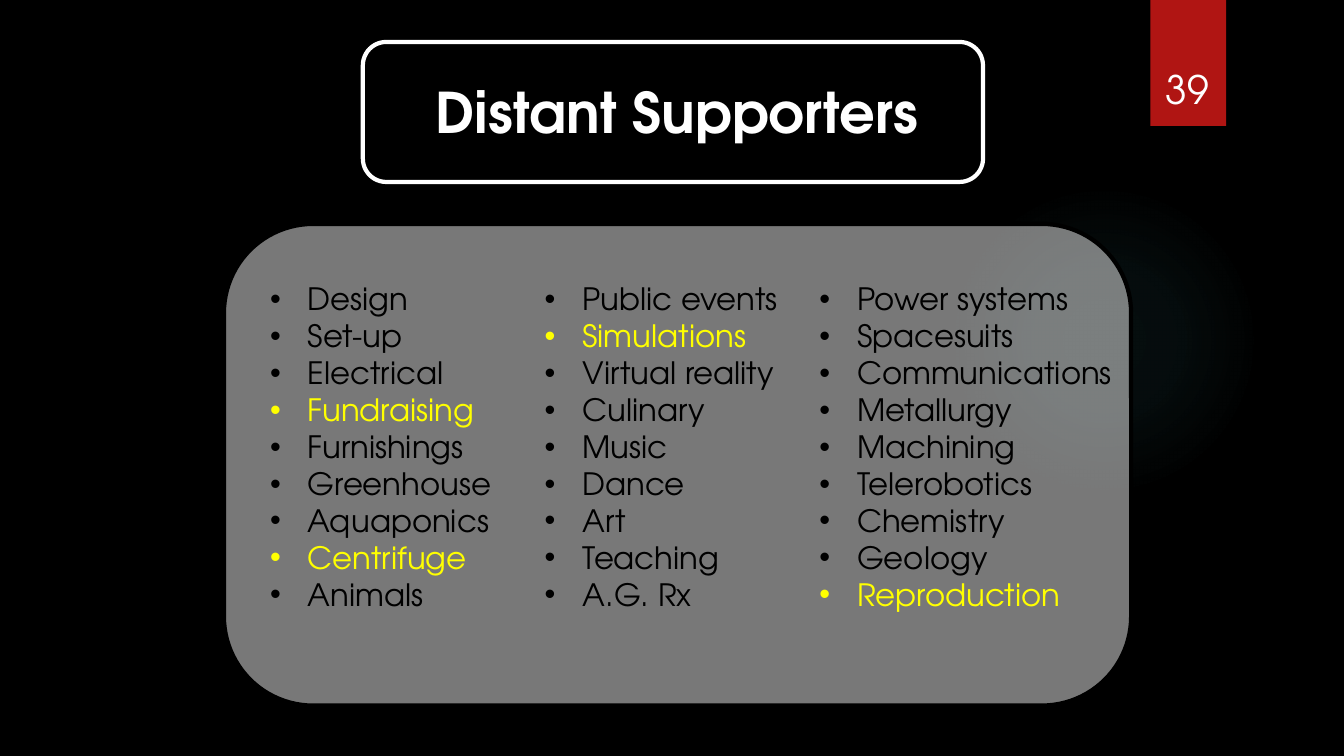
from dataclasses import dataclass

from lxml import etree
from pptx import Presentation
from pptx.dml.color import RGBColor
from pptx.enum import shapes, text
from pptx.oxml import ns
from pptx.util import Pt

# Content
TITLE = "Distant Supporters"
PAGE_NUMBER = "39"
COLUMNS = [
    ["Design", "Set-up", "Electrical", "Fundraising", "Furnishings",
     "Greenhouse", "Aquaponics", "Centrifuge", "Animals"],
    ["Public events", "Simulations", "Virtual reality", "Culinary", "Music",
     "Dance", "Art", "Teaching", "A.G. Rx"],
    ["Power systems", "Spacesuits", "Communications", "Metallurgy", "Machining",
     "Telerobotics", "Chemistry", "Geology", "Reproduction"],
]
HIGHLIGHTED = {"Fundraising", "Centrifuge", "Simulations", "Reproduction"}


@dataclass(frozen=True)
class Theme:
    font: str = "TeX Gyre Adventor"
    black: str = "000000"
    white: str = "FFFFFF"
    yellow: str = "FFFF00"
    red: str = "B01513"
    glow: str = "50B9C1"
    title_size: int = 40
    number_size: int = 28
    list_size: int = 22


THEME = Theme()

# Layout in points
COLUMN_LEFT, COLUMN_TOP, COLUMN_PITCH = 185.8, 196.6, 196.2
COLUMN_WIDTHS = [178, 230, 230]
COLUMN_HEIGHT = 247
BULLET_INDENT = 27
GLOW_STOPS = [(0, 7), (36, 6), (69, 0)]  # position and opacity, percent


def add_child(parent, tag, **attributes):
    child = etree.SubElement(parent, ns.qn(tag))
    for name, value in attributes.items():
        child.set(name, str(value))
    return child


def add_panel(page, kind, frame, fill, opacity=100, line=None):
    panel = page.shapes.add_shape(kind, *map(Pt, frame))
    panel.shadow.inherit = False
    panel.fill.solid()
    panel.fill.fore_color.rgb = RGBColor.from_string(fill)
    if opacity < 100:
        color = panel.fill._xPr.find(".//" + ns.qn("a:srgbClr"))
        add_child(color, "a:alpha", val=opacity * 1000)
    if line:
        panel.line.color.rgb = RGBColor.from_string(line)
        panel.line.width = Pt(3)
    else:
        panel.line.fill.background()
    return panel


def add_glow(page, frame):
    glow = add_panel(page, shapes.MSO_SHAPE.OVAL, frame, THEME.glow)
    glow.fill.gradient()
    gradient = glow._element.spPr.find(ns.qn("a:gradFill"))
    for child in list(gradient):
        gradient.remove(child)
    stops = add_child(gradient, "a:gsLst")
    for position, opacity in GLOW_STOPS:
        stop = add_child(stops, "a:gs", pos=position * 1000)
        color = add_child(stop, "a:srgbClr", val=THEME.glow)
        add_child(color, "a:alpha", val=opacity * 1000)
    center = add_child(gradient, "a:path", path="circle")
    add_child(center, "a:fillToRect", l=50000, t=50000, r=50000, b=50000)


def add_text(page, frame, lines, size, color, bold=False, bullets=False,
             anchor=text.MSO_ANCHOR.TOP, grow=True):
    box = page.shapes.add_textbox(*map(Pt, frame))
    body = box.text_frame
    body.word_wrap = True
    body.vertical_anchor = anchor
    if grow:
        body.auto_size = text.MSO_AUTO_SIZE.SHAPE_TO_FIT_TEXT
    for index, line in enumerate(lines):
        para = body.paragraphs[0] if index == 0 else body.add_paragraph()
        if bullets:
            properties = para._p.get_or_add_pPr()
            properties.set("marL", str(Pt(BULLET_INDENT)))
            properties.set("indent", str(-Pt(BULLET_INDENT)))
            add_child(properties, "a:buFont", typeface="Arial")
            add_child(properties, "a:buChar", char="•")
        else:
            para.alignment = text.PP_ALIGN.CENTER
        span = para.add_run()
        span.text = line
        span.font.name = THEME.font
        span.font.size = Pt(size)
        span.font.bold = bold
        shade = THEME.yellow if line in HIGHLIGHTED else color
        span.font.color.rgb = RGBColor.from_string(shade)


def main():
    deck = Presentation()
    deck.slide_width, deck.slide_height = Pt(960), Pt(540)
    page = deck.slides.add_slide(deck.slide_layouts[6])
    page.background.fill.solid()
    page.background.fill.fore_color.rgb = RGBColor.from_string(THEME.black)

    # Backdrop glow and page number ribbon
    add_glow(page, (677.5, 131.8, 221.8, 221.8))
    add_panel(page, shapes.MSO_SHAPE.RECTANGLE, (821.8, 0, 54, 90), THEME.red)

    # Title
    rounded = shapes.MSO_SHAPE.ROUNDED_RECTANGLE
    add_panel(page, rounded, (259.2, 30, 443, 100), THEME.black, 71, THEME.white)
    add_text(page, (262, 51.8, 443, 55.4), [TITLE], THEME.title_size,
             THEME.white, bold=True)

    # Supporter lists
    panel = add_panel(page, rounded, (160, 160, 648, 344), THEME.white, 47,
                      THEME.black)
    panel.adjustments[0] = 0.185
    for index, (names, width) in enumerate(zip(COLUMNS, COLUMN_WIDTHS)):
        left = COLUMN_LEFT + index * COLUMN_PITCH
        add_text(page, (left, COLUMN_TOP, width, COLUMN_HEIGHT), names,
                 THEME.list_size, THEME.black, bullets=True)

    # Page number
    add_text(page, (815, 23, 66.2, 60.5), [PAGE_NUMBER], THEME.number_size,
             THEME.white, anchor=text.MSO_ANCHOR.BOTTOM, grow=False)

    deck.save("out.pptx")


if __name__ == "__main__":
    main()
